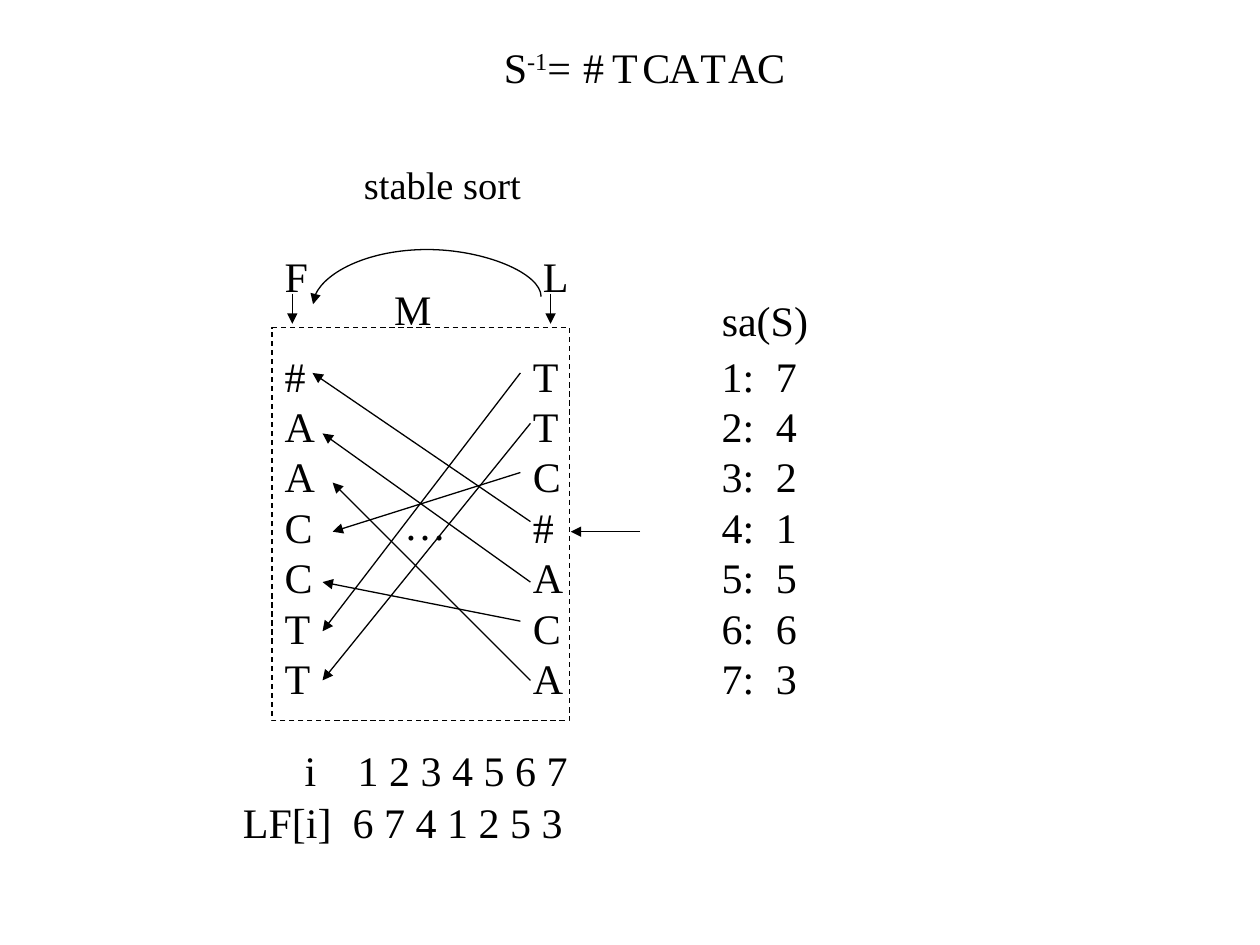
from lxml import etree
from pptx import Presentation
from pptx.dml.color import RGBColor
from pptx.enum import dml, shapes, text
from pptx.oxml import ns
from pptx.util import Inches, Pt

BLACK = RGBColor(0, 0, 0)
FONT = "Times New Roman"
FIRST = "#AACCTT"
LAST = "TTC#ACA"
LF = [6, 7, 4, 1, 2, 5, 3]
SUFFIXES = [7, 4, 2, 1, 5, 6, 3]
ROW_STEP = 0.4
LINE_HEIGHT = 0.5
COLUMN_HEIGHT = 2.9


def add_run(paragraph, words, size=24):
    run = paragraph.add_run()
    run.text = words
    run.font.size = Pt(size)
    run.font.name = FONT
    run.font.color.rgb = BLACK
    return run


def add_label(slide, left, top, width, lines, height=LINE_HEIGHT, size=24, wrap=False):
    label = slide.shapes.add_textbox(Inches(left), Inches(top), Inches(width), Inches(height))
    frame = label.text_frame
    frame.word_wrap = wrap
    frame.auto_size = text.MSO_AUTO_SIZE.SHAPE_TO_FIT_TEXT
    for index, words in enumerate(lines):
        paragraph = frame.add_paragraph() if index else frame.paragraphs[0]
        if words:
            add_run(paragraph, words, size)
    return frame.paragraphs[0]


def add_arrow(slide, start, end, kind=shapes.MSO_CONNECTOR.STRAIGHT):
    arrow = slide.shapes.add_connector(kind, *map(Inches, (*start, *end)))
    arrow.line.color.rgb = BLACK
    arrow.line.width = Pt(0.75)
    outline = arrow.line._get_or_add_ln()
    etree.SubElement(outline, ns.qn("a:tailEnd"), type="triangle")
    etree.SubElement(arrow._element.spPr, ns.qn("a:effectLst"))
    return arrow


def add_reversed_string(slide, left, top):
    formula = add_label(slide, left, top, 0.76, [""])
    add_run(formula, "S")
    exponent = add_run(formula, "-1")
    exponent.font._element.set("baseline", "30000")
    add_run(formula, "=")
    offsets = [0.63, 0.86, 1.1, 1.31, 1.56, 1.78, 2.01]
    widths = {"#": 0.37, "T": 0.4, "C": 0.42, "A": 0.44}
    for letter, offset in zip("#TCATAC", offsets):
        add_label(slide, left + offset, top, widths[letter], [letter])


def add_stable_sort(slide, left, top):
    add_label(slide, left + 0.31, top, 1.46, ["stable sort"], 0.47, 22, wrap=True)
    arc = add_arrow(slide, (left + 0.94, top + 2.06), (left + 0.88, top + 0.25),
                    shapes.MSO_CONNECTOR.CURVE)
    properties = arc._element.spPr
    properties.find(ns.qn("a:xfrm")).set("rot", "16200000")
    geometry = properties.find(ns.qn("a:prstGeom"))
    adjustments = geometry.find(ns.qn("a:avLst"))
    if adjustments is None:
        adjustments = etree.SubElement(geometry, ns.qn("a:avLst"))
    etree.SubElement(adjustments, ns.qn("a:gd"), name="adj1", fmla="val -626100")


def add_matrix(slide, left, top, width, height):
    border = slide.shapes.add_shape(shapes.MSO_SHAPE.RECTANGLE, Inches(left), Inches(top),
                                    Inches(width), Inches(height))
    border.shadow.inherit = False
    border.fill.background()
    border.line.color.rgb = BLACK
    border.line.width = Pt(0.75)
    border.line.dash_style = dml.MSO_LINE.DASH
    add_label(slide, left + 0.87, top - 0.4, 0.5, ["M"])
    add_label(slide, left, top + 0.13, 0.51, FIRST, COLUMN_HEIGHT)
    add_label(slide, left + 1.97, top + 0.13, 0.39, LAST, COLUMN_HEIGHT, wrap=True)
    add_label(slide, left + 0.95, top + 1.31, 0.53, ["…"])
    for heading, offset, width_of_heading, arrow_offset in (("F", 0, 0.39, 0.16),
                                                            ("L", 2.05, 0.4, 2.21)):
        add_label(slide, left + offset, top - 0.66, width_of_heading, [heading])
        add_arrow(slide, (left + arrow_offset, top - 0.27), (left + arrow_offset, top - 0.03))
    add_arrow(slide, (left + 2.92, top + 1.62), (left + 2.37, top + 1.62))
    add_mapping(slide, left, top)


def add_mapping(slide, left, top):
    last_ends = [(1.97, 0.36), (2.05, 0.76), (1.97, 1.15), (2.05, 1.54),
                 (2.05, 2.02), (1.97, 2.33), (2.05, 2.8)]
    first_ends = [(0.32, 0.36), (0.4, 0.84), (0.48, 1.23), (0.48, 1.62),
                  (0.4, 2.02), (0.4, 2.41), (0.4, 2.8)]
    for (start_x, start_y), target in zip(last_ends, LF):
        end_x, end_y = first_ends[target - 1]
        add_arrow(slide, (left + start_x, top + start_y), (left + end_x, top + end_y))


def add_suffix_array(slide, left, top):
    add_label(slide, left, top, 0.89, ["sa(S)"])
    rows_top = top + 0.44
    add_label(slide, left, rows_top, 0.46, [f"{row}:" for row in range(1, 8)], COLUMN_HEIGHT)
    for row, suffix in enumerate(SUFFIXES):
        add_label(slide, left + 0.43, rows_top + row * ROW_STEP, 0.37, [str(suffix)])


def add_lf_row(slide, left, top, width, name, values, tab):
    row = add_label(slide, left, top, width, [""], wrap=True)
    stops = etree.SubElement(row._p.get_or_add_pPr(), ns.qn("a:tabLst"))
    etree.SubElement(stops, ns.qn("a:tab"), pos=str(Inches(tab)), algn="l")
    add_run(row, name + "\t" + " ".join(map(str, values)))


def add_lf_table(slide, left, top):
    add_lf_row(slide, left + 0.49, top, 2.4, "i", range(1, 8), 0.42)
    add_lf_row(slide, left, top + 0.41, 2.8, "LF[i]", LF, 0.87)


def main():
    deck = Presentation()
    deck.slide_width, deck.slide_height = Inches(10), Inches(7.5)
    slide = deck.slides.add_slide(deck.slide_layouts[6])
    add_reversed_string(slide, 3.9, 0.28)
    add_stable_sort(slide, 2.48, 1.23)
    add_matrix(slide, 2.16, 2.6, 2.36, 3.12)
    add_suffix_array(slide, 5.63, 2.29)
    add_lf_table(slide, 1.83, 5.86)
    deck.save("out.pptx")


if __name__ == "__main__":
    main()
